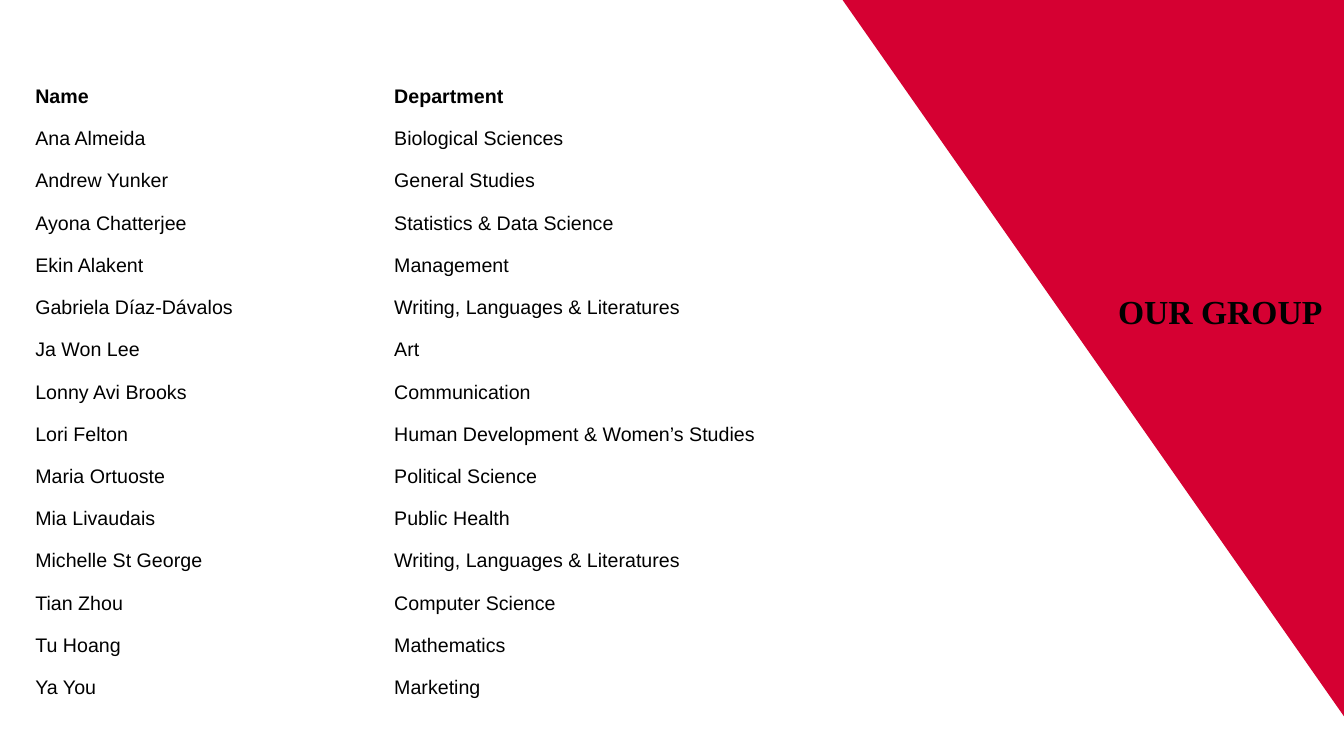
from pptx import Presentation
from pptx import util as u
from pptx.dml.color import RGBColor
from pptx.enum import text

COLORS = {"red": "D50032", "black": "000000", "white": "FFFFFF"}
NO_STYLE_NO_GRID = "{2D5ABB26-0587-4C30-8999-92F81FD0307C}"

MEMBERS = [
    ("Name", "Department"),
    ("Ana Almeida", "Biological Sciences"),
    ("Andrew Yunker", "General Studies"),
    ("Ayona Chatterjee", "Statistics & Data Science"),
    ("Ekin Alakent", "Management"),
    ("Gabriela Díaz-Dávalos", "Writing, Languages & Literatures"),
    ("Ja Won Lee", "Art"),
    ("Lonny Avi Brooks", "Communication"),
    ("Lori Felton", "Human Development & Women’s Studies"),
    ("Maria Ortuoste", "Political Science"),
    ("Mia Livaudais", "Public Health"),
    ("Michelle St George", "Writing, Languages & Literatures"),
    ("Tian Zhou", "Computer Science"),
    ("Tu Hoang", "Mathematics"),
    ("Ya You", "Marketing"),
]


def write(frame, words, font="Arial", size=14, bold=False, color="black"):
    span = frame.paragraphs[0].add_run()
    span.text = words
    span.font.name = font
    span.font.size = u.Pt(size)
    span.font.bold = bold
    span.font.color.rgb = RGBColor.from_string(COLORS[color])


def set_margins(holder):
    holder.margin_left = holder.margin_right = u.Inches(0.1)
    holder.margin_top = holder.margin_bottom = u.Inches(0.1)


class GroupPage:
    def __init__(self, deck):
        self.page = deck.slides.add_slide(deck.slide_layouts[6])
        background = self.page.background.fill
        background.solid()
        background.fore_color.rgb = RGBColor.from_string(COLORS["white"])

    def polygon(self, points, color):
        corners = [(u.Inches(x), u.Inches(y)) for x, y in points]
        builder = self.page.shapes.build_freeform(*corners[0])
        builder.add_line_segments(corners[1:], close=True)
        shape = builder.convert_to_shape()
        shape.shadow.inherit = False
        shape.fill.solid()
        shape.fill.fore_color.rgb = RGBColor.from_string(COLORS[color])
        shape.line.fill.background()

    def table(self, rows, left, top, widths, row_height):
        frame = self.page.shapes.add_table(
            len(rows), len(widths), u.Inches(left), u.Inches(top),
            u.Inches(sum(widths)), u.Inches(row_height * len(rows)))
        table = frame.table
        table.first_row = table.horz_banding = False
        table._tbl.tblPr[0].text = NO_STYLE_NO_GRID
        for column, width in zip(table.columns, widths):
            column.width = u.Inches(width)
        for row_index, row in enumerate(rows):
            table.rows[row_index].height = u.Inches(row_height)
            for column_index, words in enumerate(row):
                cell = table.cell(row_index, column_index)
                cell.fill.background()
                set_margins(cell)
                write(cell.text_frame, words, bold=row_index == 0)

    def label(self, words, left, top, width, height, **style):
        box = self.page.shapes.add_textbox(*map(u.Inches, (left, top, width, height)))
        frame = box.text_frame
        frame.word_wrap = True
        frame.auto_size = text.MSO_AUTO_SIZE.SHAPE_TO_FIT_TEXT
        set_margins(frame)
        write(frame, words, **style)


def main():
    deck = Presentation()
    deck.slide_width, deck.slide_height = u.Inches(13.33), u.Inches(7.5)
    group = GroupPage(deck)

    # Red corner
    group.polygon([(13.38, -0.03), (13.34, 7.12), (8.35, -0.01)], "red")

    # Members; rows grow to fit their text
    group.table(MEMBERS, 0.25, 0.75, widths=(3.56, 6.5), row_height=0.21)

    # Title
    group.label("OUR GROUP", 10.99, 2.79, 3.28, 0.61,
                font="Times New Roman", size=24, bold=True)

    deck.save("out.pptx")


if __name__ == "__main__":
    main()
